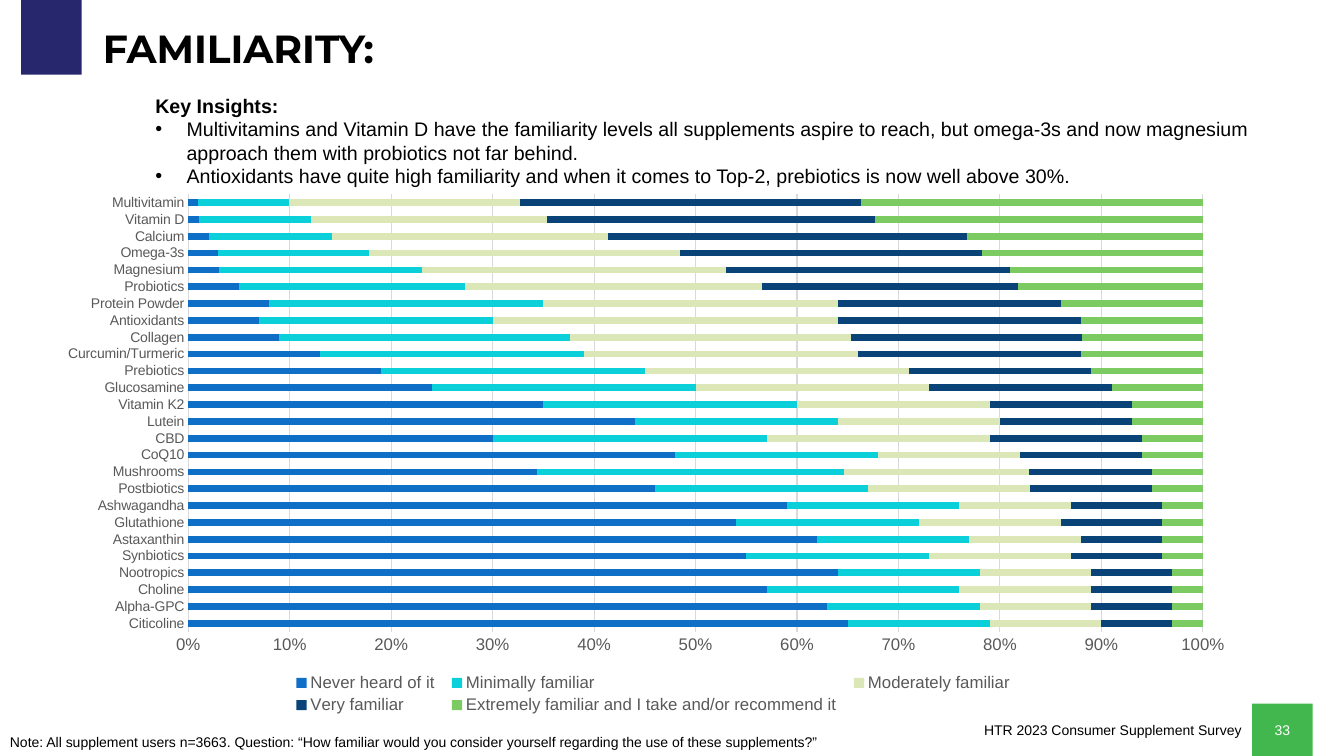
from dataclasses import dataclass

import pptx
import pptx.chart.data
import pptx.dml.color
import pptx.enum.chart
import pptx.enum.shapes
import pptx.enum.text
import pptx.oxml
import pptx.oxml.ns
import pptx.util
from pptx.util import Inches

COLORS = {
    "black": "000000", "white": "FFFFFF", "grey": "595959", "grid": "D9D9D9",
    "navy": "27276E", "green": "42B74D",
    "never": "0F6FC6", "minimal": "0BD0D9", "moderate": "DBE7B6",
    "very": "094377", "extreme": "7CCA62",
}
BODY_FONT = "Arial"
ALIGN = pptx.enum.text.PP_ALIGN
ANCHOR = pptx.enum.text.MSO_ANCHOR


@dataclass
class Box:
    left: float
    top: float
    width: float
    height: float

    def emu(self) -> tuple:
        return tuple(Inches(v) for v in (self.left, self.top, self.width, self.height))


@dataclass
class Block:
    box: Box
    color: str
    text: str = ""


@dataclass
class Caption:
    box: Box
    text: str
    align: ALIGN


@dataclass
class Answer:
    name: str
    color: str
    values: tuple


BLOCKS = [
    Block(Box(0.21, -0.05, 0.6, 0.79), "navy"),
    Block(Box(12.42, 6.98, 0.6, 0.52), "green", "33"),
]
CAPTIONS = [
    Caption(Box(7.92, 7.11, 4.49, 0.27), "HTR 2023 Consumer Supplement Survey", ALIGN.RIGHT),
    Caption(Box(0, 7.23, 8.78, 0.27),
            "Note: All supplement users n=3663. Question: “How familiar would you "
            "consider yourself regarding the use of these supplements?”", ALIGN.LEFT),
]
INSIGHTS = [
    "Multivitamins and Vitamin D have the familiarity levels all supplements aspire to reach, "
    "but omega-3s and now magnesium approach them with probiotics not far behind.",
    "Antioxidants have quite high familiarity and when it comes to Top-2, prebiotics is now "
    "well above 30%.",
]
SUPPLEMENTS = [
    "Citicoline", "Alpha-GPC", "Choline", "Nootropics", "Synbiotics", "Astaxanthin",
    "Glutathione", "Ashwagandha", "Postbiotics", "Mushrooms", "CoQ10", "CBD", "Lutein",
    "Vitamin K2", "Glucosamine", "Prebiotics", "Curcumin/Turmeric", "Collagen",
    "Antioxidants", "Protein Powder", "Probiotics", "Magnesium", "Omega-3s", "Calcium",
    "Vitamin D", "Multivitamin",
]
ANSWERS = [
    Answer("Never heard of it", "never",
           (65, 63, 57, 64, 55, 62, 54, 59, 46, 34, 48, 30, 44,
            35, 24, 19, 13, 9, 7, 8, 5, 3, 3, 2, 1, 1)),
    Answer("Minimally familiar", "minimal",
           (14, 15, 19, 14, 18, 15, 18, 17, 21, 30, 20, 27, 20,
            25, 26, 26, 26, 29, 23, 27, 22, 20, 15, 12, 11, 9)),
    Answer("Moderately familiar", "moderate",
           (11, 11, 13, 11, 14, 11, 14, 11, 16, 18, 14, 22, 16,
            19, 23, 26, 27, 28, 34, 29, 29, 30, 31, 27, 23, 23)),
    Answer("Very familiar", "very",
           (7, 8, 8, 8, 9, 8, 10, 9, 12, 12, 12, 15, 13,
            14, 18, 18, 22, 23, 24, 22, 25, 28, 30, 35, 32, 34)),
    Answer("Extremely familiar and I take and/or recommend it", "extreme",
           (3, 3, 3, 3, 4, 4, 4, 4, 5, 5, 6, 6, 7,
            7, 9, 11, 12, 12, 12, 14, 18, 19, 22, 23, 32, 34)),
]


def rgb(color: str) -> pptx.dml.color.RGBColor:
    return pptx.dml.color.RGBColor.from_string(COLORS[color])


def style_font(font, size: float, color: str = "black", bold: bool = False,
               name: str = BODY_FONT) -> None:
    font.name, font.size, font.bold = name, pptx.util.Pt(size), bold
    font.color.rgb = rgb(color)


def add_run(paragraph, text: str, size: float, **style) -> None:
    run = paragraph.add_run()
    run.text = text
    style_font(run.font, size, **style)


def place(shape, box: Box) -> None:
    shape.left, shape.top, shape.width, shape.height = box.emu()


def draw_block(slide, block: Block) -> None:
    shape = slide.shapes.add_shape(pptx.enum.shapes.MSO_SHAPE.RECTANGLE, *block.box.emu())
    shape.shadow.inherit = False
    shape.fill.solid()
    shape.fill.fore_color.rgb = rgb(block.color)
    shape.line.fill.background()
    if block.text:
        shape.text_frame.vertical_anchor = ANCHOR.MIDDLE
        paragraph = shape.text_frame.paragraphs[0]
        paragraph.alignment = ALIGN.CENTER
        add_run(paragraph, block.text, 10, color="white")


def draw_caption(slide, caption: Caption) -> None:
    frame = slide.shapes.add_textbox(*caption.box.emu()).text_frame
    frame.word_wrap = True
    frame.paragraphs[0].alignment = caption.align
    add_run(frame.paragraphs[0], caption.text, 10)


def write_title(title) -> None:
    place(title, Box(0.92, 0.25, 11.5, 0.5))
    frame = title.text_frame
    frame.auto_size = pptx.enum.text.MSO_AUTO_SIZE.NONE
    frame.vertical_anchor = ANCHOR.MIDDLE
    paragraph = frame.paragraphs[0]
    paragraph.alignment, paragraph.line_spacing = ALIGN.LEFT, 0.9
    add_run(paragraph, "FAMILIARITY:", 28, bold=True, name="Montserrat")


def set_bullet(paragraph, char: str, indent: float) -> None:
    """Give the paragraph a hanging bullet, or none if char is empty."""
    properties = paragraph._p.get_or_add_pPr()
    properties.set("marL", str(Inches(indent)))
    properties.set("indent", str(-Inches(indent)))
    bullet = pptx.oxml.ns.qn("a:buChar" if char else "a:buNone")
    element = properties.makeelement(bullet, {"char": char} if char else {})
    properties.append(element)


def write_insights(body) -> None:
    place(body, Box(1.44, 0.88, 11.89, 1.28))
    frame = body.text_frame
    frame.auto_size = pptx.enum.text.MSO_AUTO_SIZE.NONE
    frame.vertical_anchor = ANCHOR.TOP
    for index, text in enumerate(["Key Insights:", *INSIGHTS]):
        heading = index == 0
        paragraph = frame.paragraphs[0] if heading else frame.add_paragraph()
        set_bullet(paragraph, "" if heading else "•", 0 if heading else 0.31)
        paragraph.space_before = pptx.util.Pt(0)
        add_run(paragraph, text, 14, bold=heading)


def set_layout(parent, index: int, box: Box, inner: bool = False) -> None:
    """Fix a chart part at box, in fractions of the chart area."""
    for old in parent.findall(pptx.oxml.ns.qn("c:layout")):
        parent.remove(old)
    target = '<c:layoutTarget val="inner"/>' if inner else ""
    parent.insert(index, pptx.oxml.parse_xml(
        f'<c:layout {pptx.oxml.ns.nsdecls("c")}><c:manualLayout>{target}'
        '<c:xMode val="edge"/><c:yMode val="edge"/>'
        f'<c:x val="{box.left}"/><c:y val="{box.top}"/>'
        f'<c:w val="{box.width}"/><c:h val="{box.height}"/></c:manualLayout></c:layout>'))


def style_axis(axis, size: float) -> None:
    axis.major_tick_mark = axis.minor_tick_mark = pptx.enum.chart.XL_TICK_MARK.NONE
    style_font(axis.tick_labels.font, size, "grey")


def style_line(line) -> None:
    line.color.rgb = rgb("grid")
    line.width = pptx.util.Pt(0.75)


def draw_chart(slide) -> None:
    data = pptx.chart.data.CategoryChartData(number_format="0")
    data.categories = SUPPLEMENTS
    for answer in ANSWERS:
        data.add_series(answer.name, answer.values)
    chart = slide.shapes.add_chart(pptx.enum.chart.XL_CHART_TYPE.BAR_STACKED_100,
                                   *Box(0.43, 1.82, 11.98, 5.36).emu(), data).chart
    style_font(chart.font, 10)
    chart.has_title = False
    plot = chart.plots[0]
    plot.gap_width, plot.overlap, plot.vary_by_categories = 150, 100, False
    for series, answer in zip(plot.series, ANSWERS):
        series.format.fill.solid()
        series.format.fill.fore_color.rgb = rgb(answer.color)

    style_axis(chart.category_axis, 10)
    style_line(chart.category_axis.format.line)
    shares = chart.value_axis
    style_axis(shares, 12)
    shares.major_unit = 0.1
    shares.format.line.fill.background()
    shares.has_major_gridlines = True
    style_line(shares.major_gridlines.format.line)
    shares.tick_labels.number_format = "0%"
    shares.tick_labels.number_format_is_linked = False

    chart.has_legend = True
    chart.legend.position = pptx.enum.chart.XL_LEGEND_POSITION.BOTTOM
    chart.legend.include_in_layout = False
    style_font(chart.legend.font, 12, "grey")
    set_layout(chart.legend._element, 1, Box(0.2, 0.9, 0.61, 0.09))
    set_layout(chart._chartSpace.chart.plotArea, 0, Box(0.12, 0.02, 0.84, 0.81), inner=True)


def main() -> None:
    deck = pptx.Presentation()
    deck.slide_width, deck.slide_height = Inches(13.33), Inches(7.5)
    slide = deck.slides.add_slide(deck.slide_layouts[1])
    for block in BLOCKS:
        draw_block(slide, block)
    write_title(slide.shapes.title)
    draw_chart(slide)
    for caption in CAPTIONS:
        draw_caption(slide, caption)
    write_insights(slide.placeholders[1])
    deck.save("out.pptx")


if __name__ == "__main__":
    main()
